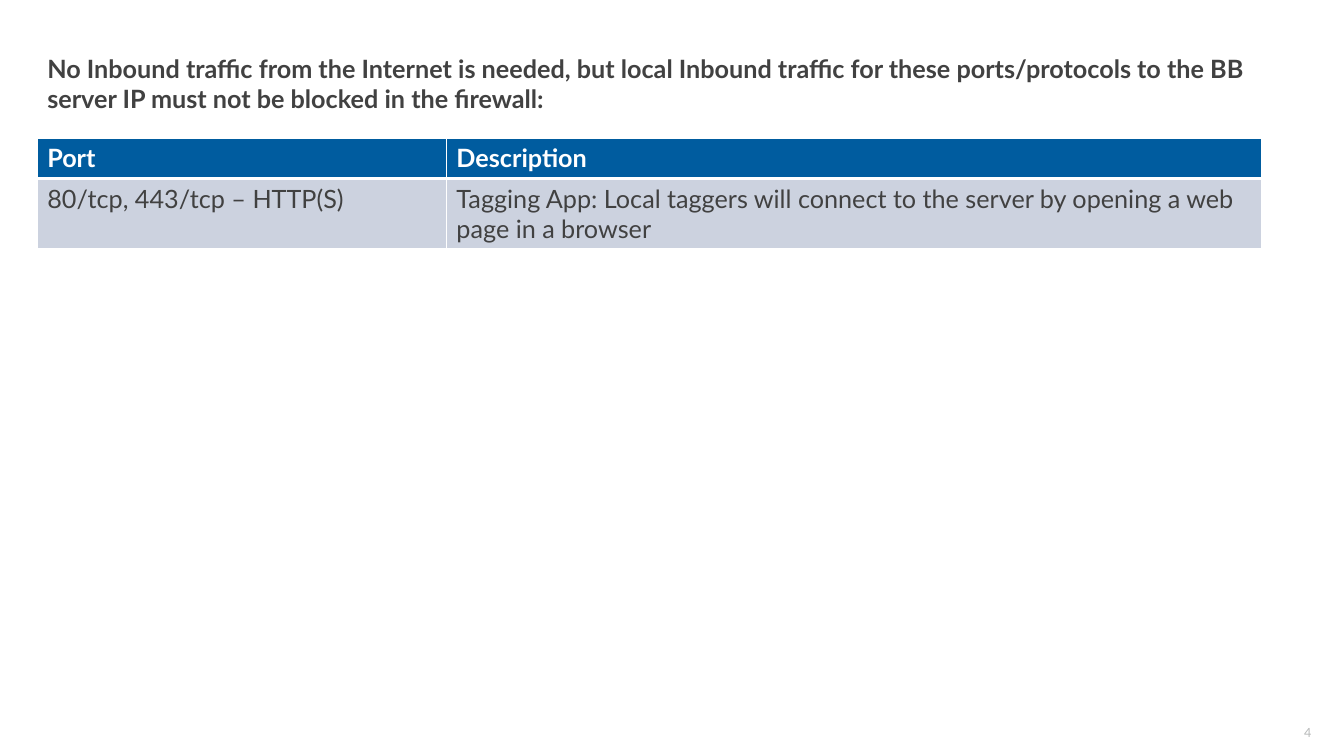
from dataclasses import dataclass

import pptx
import pptx.dml.color
import pptx.enum.text
import pptx.util
from lxml import etree
from pptx.oxml.ns import qn

Pt = pptx.util.Pt
Align = pptx.enum.text.PP_ALIGN
Anchor = pptx.enum.text.MSO_ANCHOR


@dataclass(frozen=True)
class Theme:
    font: str = "Lato"
    ink: str = "414141"
    white: str = "FFFFFF"
    blue: str = "005C9F"
    pale: str = "CCD2DF"
    gray: str = "B7B9B9"
    body: int = 18
    small: int = 9
    thin: int = 1
    thick: int = 3


@dataclass(frozen=True)
class Row:
    port: str
    text: str
    high: float
    fill: str
    ink: str
    bold: bool
    rule: int


THEME = Theme()
LEFT = 26.6
COLS = (292.3, 582)
ROWS = (
    Row("Port", "Description", 28.8, THEME.blue, THEME.white, True, THEME.thick),
    Row(
        "80/tcp, 443/tcp – HTTP(S)",
        "Tagging App: Local taggers will connect to the server by opening a web page in a browser",
        50.4, THEME.pale, THEME.ink, False, THEME.thin,
    ),
)
TITLE = (
    "No Inbound traffic from the Internet is needed, but local Inbound traffic for "
    "these ports/protocols to the BB server IP must not be blocked in the firewall:"
)


def color(code: str) -> pptx.dml.color.RGBColor:
    return pptx.dml.color.RGBColor.from_string(code)


def write(frame, text: str, *, size: int = THEME.body, ink: str = THEME.ink,
          bold: bool = False, align=Align.LEFT, anchor=Anchor.TOP) -> None:
    frame.word_wrap = True
    frame.vertical_anchor = anchor
    para = frame.paragraphs[0]
    para.alignment = align
    run = para.add_run()
    run.text = text
    font = run.font
    font.name, font.size, font.bold = THEME.font, Pt(size), bold
    font.color.rgb = color(ink)


def place(shape, left: float, top: float, width: float, high: float) -> None:
    shape.left, shape.top = Pt(left), Pt(top)
    shape.width, shape.height = Pt(width), Pt(high)


def edge(cell, sides: dict[str, int]) -> None:
    """Draw white cell borders; sides maps L, R, T, B, in that order, to widths."""
    props = cell._tc.get_or_add_tcPr()
    for spot, (side, width) in enumerate(sides.items()):
        line = etree.Element(qn(f"a:ln{side}"), w=str(int(Pt(width))))
        fill = etree.SubElement(line, qn("a:solidFill"))
        etree.SubElement(fill, qn("a:srgbClr"), val=THEME.white)
        props.insert(spot, line)


def add_ports(slide) -> None:
    table = slide.shapes.add_table(
        len(ROWS), len(COLS), Pt(LEFT), Pt(98.6),
        Pt(sum(COLS)), Pt(sum(row.high for row in ROWS)),
    ).table
    for col, width in zip(table.columns, COLS):
        col.width = Pt(width)
    above = THEME.thin
    for line, row in zip(table.rows, ROWS):
        line.height = Pt(row.high)
        for cell, text in zip(line.cells, (row.port, row.text)):
            cell.fill.solid()
            cell.fill.fore_color.rgb = color(row.fill)
            edge(cell, {"L": THEME.thin, "R": THEME.thin, "T": above, "B": row.rule})
            write(cell.text_frame, text, ink=row.ink, bold=row.bold)
        above = row.rule


def add_title(slide) -> None:
    title = slide.shapes.title
    place(title, LEFT, 34.6, 891.4, 51.1)
    title.text_frame.auto_size = pptx.enum.text.MSO_AUTO_SIZE.NONE
    write(title.text_frame, TITLE, bold=True)


def add_page(slide) -> None:
    box = slide.shapes.add_textbox(Pt(886.3), Pt(517), Pt(50.4), Pt(11.5))
    frame = box.text_frame
    frame.margin_left = frame.margin_right = frame.margin_top = frame.margin_bottom = Pt(0)
    write(frame, "4", size=THEME.small, ink=THEME.gray,
          align=Align.RIGHT, anchor=Anchor.BOTTOM)


def main() -> None:
    deck = pptx.Presentation()
    deck.slide_width, deck.slide_height = Pt(960), Pt(540)
    slide = deck.slides.add_slide(deck.slide_layouts.get_by_name("Title Only"))
    add_title(slide)
    add_ports(slide)
    add_page(slide)
    deck.save("out.pptx")


if __name__ == "__main__":
    main()
